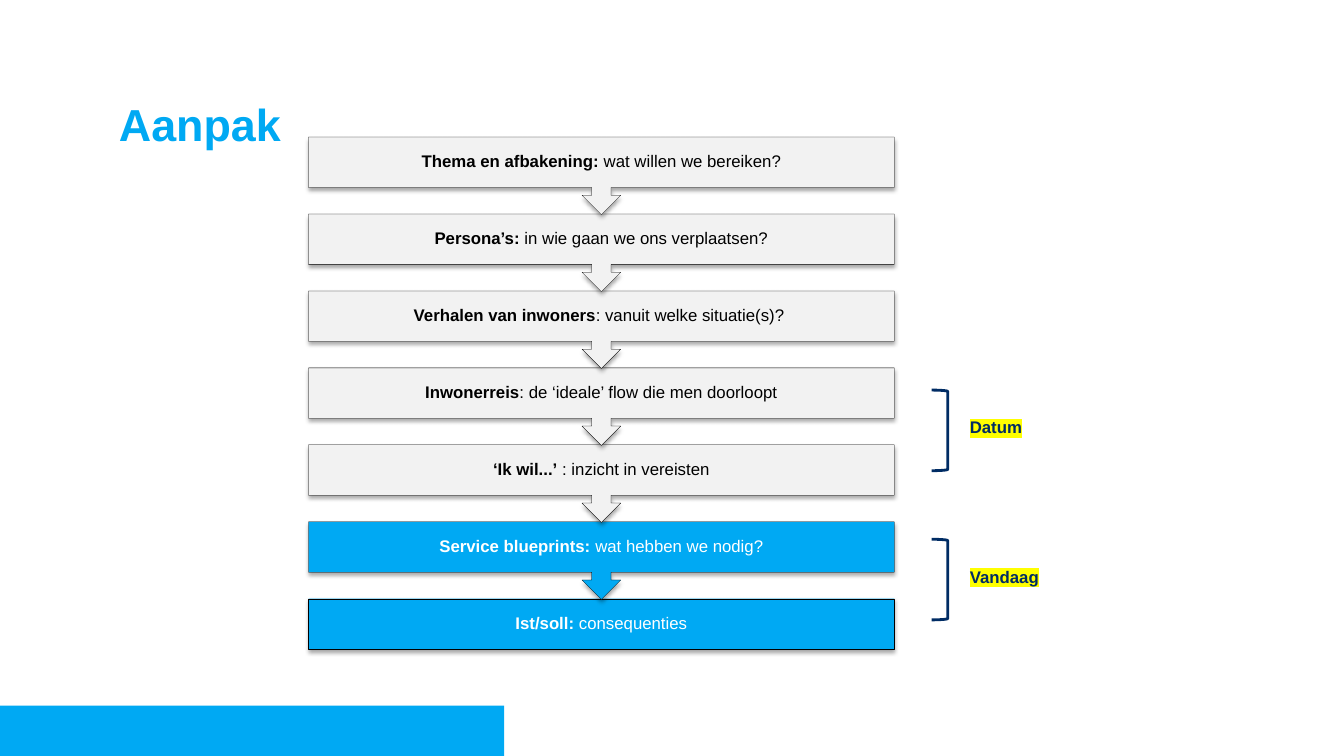
import math

from pptx import Presentation, util as u
from pptx.dml.color import RGBColor
from pptx.enum import shapes, text
from pptx.oxml import parse_xml
from pptx.oxml.ns import nsdecls

BLUE = RGBColor(0x00, 0xA9, 0xF3)
NAVY = RGBColor(0x00, 0x2C, 0x64)
GREY = RGBColor(0xF2, 0xF2, 0xF2)
BLACK = RGBColor(0x00, 0x00, 0x00)
WHITE = RGBColor(0xFF, 0xFF, 0xFF)
SHADOW = (
    f'<a:effectLst {nsdecls("a")}>'
    '<a:outerShdw blurRad="39370" dist="22860" dir="5400000" rotWithShape="0">'
    '<a:srgbClr val="000000"><a:alpha val="35000"/></a:srgbClr>'
    '</a:outerShdw></a:effectLst>'
)
HIGHLIGHT = f'<a:highlight {nsdecls("a")}><a:srgbClr val="FFFF00"/></a:highlight>'

deck = Presentation()
deck.slide_width, deck.slide_height = u.Inches(13.33), u.Inches(7.5)
page = deck.slides.add_slide(deck.slide_layouts[6])


def add_span(para, words, size, color, bold=True):
    span = para.add_run()
    span.text = words
    span.font.size = u.Pt(size)
    span.font.bold = bold
    span.font.color.rgb = color
    span.font.name = "Arial"
    return span


def add_box(left, top, width, height):
    """Add a wrapping text box, measured in inches."""
    box = page.shapes.add_textbox(*map(u.Inches, (left, top, width, height)))
    box.text_frame.word_wrap = True
    return box


# Footer band with a rounded top right corner
BAND_RIGHT, BAND_TOP, BAND_BOTTOM = 5.41, 7.02, 7.5
radius = BAND_BOTTOM - BAND_TOP
corner = [
    (BAND_RIGHT - radius + radius * math.sin(math.radians(angle)),
     BAND_BOTTOM - radius * math.cos(math.radians(angle)))
    for angle in range(0, 91, 3)
]
outline = page.shapes.build_freeform(0, BAND_BOTTOM, scale=u.Inches(1))
outline.add_line_segments([(0, BAND_TOP)] + corner, close=True)
band = outline.convert_to_shape()
band.shadow.inherit = False
band.fill.solid()
band.fill.fore_color.rgb = BLUE
band.line.fill.background()

# Title
title = add_box(1.18, 1.02, 10.97, 0.58).text_frame
title.margin_left = title.margin_right = title.margin_top = title.margin_bottom = 0
title.paragraphs[0].line_spacing = 0.9
add_span(title.paragraphs[0], "Aanpak", 32, BLUE)

# Steps, laid from the bottom up so that each arrow lies over the next step
STEPS = [
    ("Thema en afbakening: ", "wat willen we bereiken?"),
    ("Persona’s:", " in wie gaan we ons verplaatsen?"),
    ("Verhalen van inwoners", ": vanuit welke situatie(s)? "),
    ("Inwonerreis", ": de ‘ideale’ flow die men doorloopt"),
    ("‘Ik wil...’", " : inzicht in vereisten"),
    ("Service blueprints: ", "wat hebben we nodig?"),
    ("Ist/soll: ", "consequenties"),
]
STEP_LEFT, STEP_TOP, STEP_WIDTH, STEP_PITCH = 3.06, 1.36, 5.81, 4.58 / 6
FIRST_TODAY, LAST = 5, len(STEPS) - 1

for row in range(LAST, -1, -1):
    if row == LAST:
        kind, height = shapes.MSO_SHAPE.RECTANGLE, 0.5
    else:
        kind, height = shapes.MSO_SHAPE.DOWN_ARROW_CALLOUT, 0.77
    today = row >= FIRST_TODAY
    step = page.shapes.add_shape(
        kind, u.Inches(STEP_LEFT), u.Inches(STEP_TOP + row * STEP_PITCH),
        u.Inches(STEP_WIDTH), u.Inches(height))
    step.fill.solid()
    step.fill.fore_color.rgb = BLUE if today else GREY
    step.line.color.rgb = BLACK
    step.line.width = u.Pt(0.2)
    step._element.spPr.append(parse_xml(SHADOW))
    frame = step.text_frame
    frame.word_wrap = True
    frame.vertical_anchor = text.MSO_ANCHOR.MIDDLE
    para = frame.paragraphs[0]
    para.alignment = text.PP_ALIGN.CENTER
    para.line_spacing = 0.9
    for words, bold in zip(STEPS[row], (True, False)):
        add_span(para, words, 12, WHITE if today else BLACK, bold)

# Brackets with their highlighted labels
for label, top in (("Datum", 3.87), ("Vandaag", 5.35)):
    bracket = page.shapes.add_shape(
        shapes.MSO_SHAPE.RIGHT_BRACKET, u.Inches(9.24), u.Inches(top),
        u.Inches(0.16), u.Inches(0.8))
    bracket.shadow.inherit = False
    bracket.fill.background()
    bracket.line.color.rgb = NAVY
    bracket.line.width = u.Pt(2)
    box = add_box(9.52, top + 0.22, 2.91, 0.3)
    span = add_span(box.text_frame.paragraphs[0], label, 12, NAVY)
    span.font._element.find("{*}solidFill").addnext(parse_xml(HIGHLIGHT))

deck.save("out.pptx")
